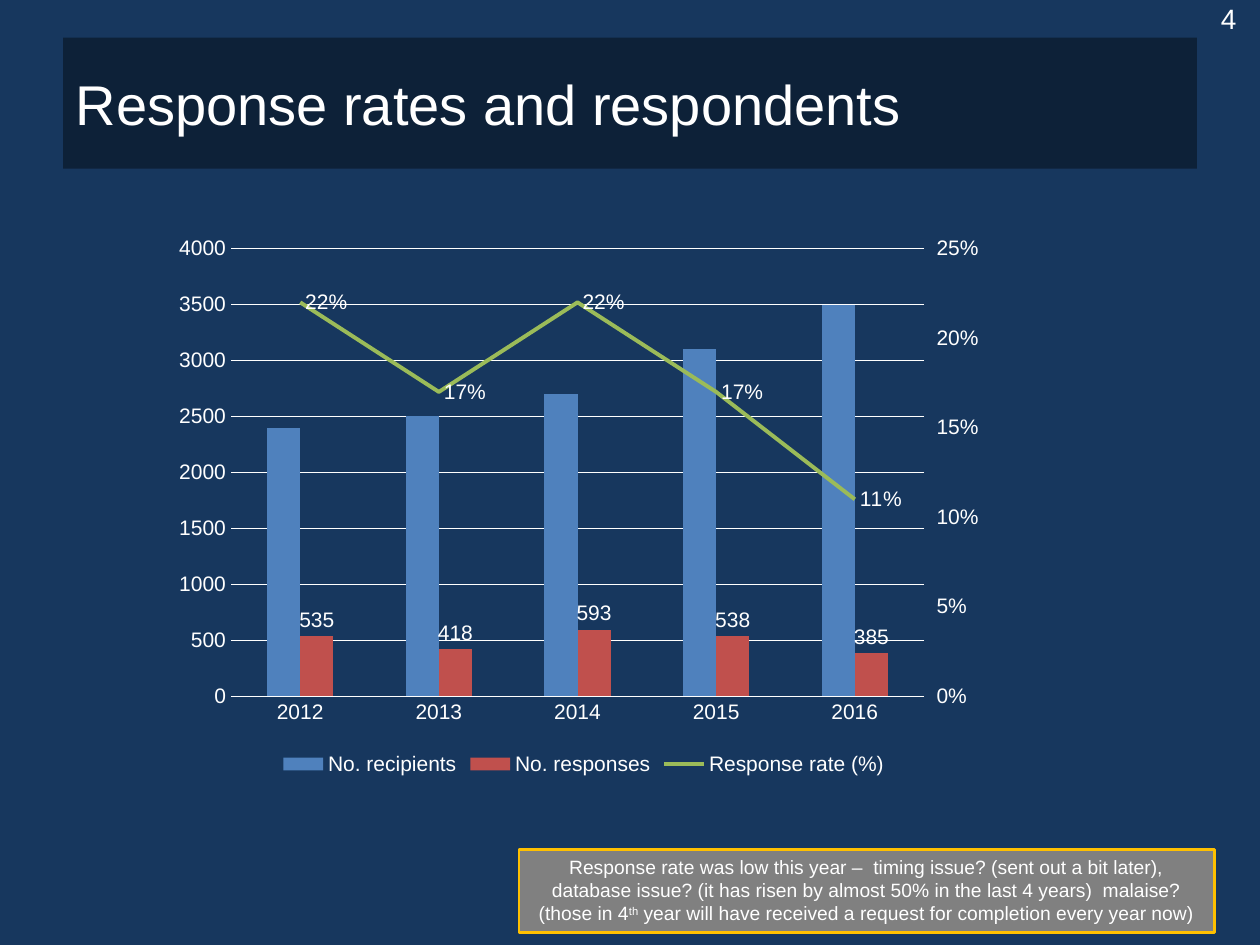
from copy import deepcopy
from pptx import Presentation
from pptx.chart.data import CategoryChartData as ChartData
from pptx.dml.color import RGBColor as RGB
from pptx.enum.chart import XL_CHART_TYPE as Kind, XL_LABEL_POSITION as Spot
from pptx.enum.chart import XL_LEGEND_POSITION as Side, XL_MARKER_STYLE as Mark, XL_TICK_MARK as Tick
from pptx.enum.shapes import MSO_SHAPE as Shape
from pptx.enum.text import MSO_ANCHOR as Anchor, MSO_AUTO_SIZE as Auto, PP_ALIGN as Align
from pptx.oxml import parse_xml
from pptx.oxml.ns import nsdecls
from pptx.util import Cm, Pt

FONT = "Arial"
HEX = {"back": "17375E", "band": "000000", "text": "FFFFFF", "note": "808080",
       "edge": "FFC000", "sent": "4F81BD", "got": "C0504D", "rate": "9BBB59"}
TITLE = "Response rates and respondents"
PAGE = "4"
NOTE = [
    ("Response rate was low this year –  timing issue? (sent out a bit later), database issue? "
     "(it has risen by almost 50% in the last 4 years)  malaise? (those in 4", False),
    ("th", True),
    (" year will have received a request for completion every year now)", False),
]
YEARS = ["2012", "2013", "2014", "2015", "2016"]
SERIES = [
    ("No. recipients", [2400, 2500, 2700, 3100, 3500], "General"),
    ("No. responses", [535, 418, 593, 538, 385], "General"),
    ("Response rate (%)", [0.22, 0.17, 0.22, 0.17, 0.11], "0%"),
]
PLOT = {"x": 0.08, "y": 0.05, "w": 0.825, "h": 0.8}
AXES = {"left": ("50010", "50020"), "right": ("50030", "50040")}


def color(name):
    return RGB.from_string(HEX[name])


def style(font, size):
    font.name, font.size = FONT, Pt(size)
    font.color.rgb = color("text")


def paint(fill, name):
    fill.solid()
    fill.fore_color.rgb = color(name)


def stroke(line, name, width):
    line.color.rgb = color(name)
    line.width = Pt(width)


def write(para, text, size, raised=False):
    run = para.add_run()
    run.text = text
    style(run.font, size)
    if raised:
        run._r.get_or_add_rPr().set("baseline", "30000")


def label(ser, spot, fmt):
    tags = ser.data_labels
    tags.show_value = True
    tags.position = spot
    tags.number_format, tags.number_format_is_linked = fmt, False
    style(tags.font, 12)


def setval(root, query, value):
    for node in root.xpath(query):
        node.set("val", value)


def scale(axis, top, step):
    axis.minimum_scale, axis.maximum_scale, axis.major_unit = 0, top, step


def place(area):
    for old in area.xpath("./c:layout"):
        area.remove(old)
    modes = "".join(f'<c:{k}Mode val="edge"/>' for k in "xy")
    sizes = "".join(f'<c:{k} val="{v}"/>' for k, v in PLOT.items())
    area.insert(0, parse_xml(
        f'<c:layout {nsdecls("c")}><c:manualLayout><c:layoutTarget val="inner"/>'
        f'{modes}{sizes}</c:manualLayout></c:layout>'))


def combine(area):
    bars = area.xpath("./c:barChart")[0]
    rate = bars.xpath("./c:ser")[-1]
    for node in rate.xpath("./c:invertIfNegative"):
        rate.remove(node)
    ids = "".join(f'<c:axId val="{i}"/>' for i in AXES["right"])
    lines = parse_xml(
        f'<c:lineChart {nsdecls("c")}><c:grouping val="standard"/><c:varyColors val="0"/>'
        f'<c:marker val="1"/>{ids}</c:lineChart>')
    lines.insert(2, rate)
    bars.addnext(lines)

    cat, val = area.xpath("./c:catAx")[0], area.xpath("./c:valAx")[0]
    for node, one in zip(bars.xpath("./c:axId"), AXES["left"]):
        node.set("val", one)
    extra = deepcopy(val), deepcopy(cat)
    for pair, side in (((cat, val), "left"), (extra[::-1], "right")):
        for axis, own, other in zip(pair, AXES[side], AXES[side][::-1]):
            setval(axis, "./c:axId", own)
            setval(axis, "./c:crossAx", other)
    right, hidden = extra
    right.remove(right.xpath("./c:majorGridlines")[0])
    setval(right, "./c:axPos", "r")
    setval(right, "./c:crosses", "max")
    setval(right, "./c:majorTickMark", "out")
    setval(right, "./c:scaling/c:max", "0.25")
    setval(right, "./c:majorUnit", "0.05")
    right.xpath("./c:numFmt")[0].set("formatCode", "0%")
    setval(hidden, "./c:delete", "1")
    val.addnext(right)
    right.addnext(hidden)


def draw(slide):
    data = ChartData()
    data.categories = YEARS
    for name, vals, fmt in SERIES:
        data.add_series(name, vals, fmt)
    chart = slide.shapes.add_chart(Kind.COLUMN_CLUSTERED, Cm(3.3), Cm(4.45),
                                   Cm(16.94), Cm(11.28), data).chart
    style(chart.font, 10)
    chart.has_title = False
    chart.has_legend = True
    chart.legend.position = Side.BOTTOM
    chart.legend.include_in_layout = False
    style(chart.legend.font, 12)

    cat, val = chart.category_axis, chart.value_axis
    for axis in (cat, val):
        axis.major_tick_mark = axis.minor_tick_mark = Tick.NONE
        style(axis.tick_labels.font, 12)
    stroke(cat.format.line, "text", 0.75)
    val.format.line.fill.background()
    val.has_major_gridlines = True
    stroke(val.major_gridlines.format.line, "text", 0.75)
    val.tick_labels.number_format = "General"
    val.tick_labels.number_format_is_linked = False
    scale(val, 4000, 500)

    area = chart.element.xpath(".//c:plotArea")[0]
    combine(area)
    place(area)
    bars, lines = chart.plots
    bars.gap_width, bars.overlap = 219, 0
    bars.vary_by_categories = False
    sent, got = bars.series
    paint(sent.format.fill, "sent")
    paint(got.format.fill, "got")
    label(got, Spot.OUTSIDE_END, "General")
    rate = lines.series[0]
    stroke(rate.format.line, "rate", 2.25)
    rate.marker.style = Mark.NONE
    rate.smooth = False
    label(rate, Spot.RIGHT, "0%")


def main():
    deck = Presentation()
    deck.slide_width, deck.slide_height = Cm(25.4), Cm(19.05)
    slide = deck.slides.add_slide(deck.slide_layouts[5])
    paint(slide.background.fill, "back")

    page = slide.shapes.add_textbox(Cm(24.36), Cm(-0.1), Cm(1.22), Cm(0.94)).text_frame
    page.word_wrap = False
    page.auto_size = Auto.SHAPE_TO_FIT_TEXT
    write(page.paragraphs[0], PAGE, 16)

    title = slide.shapes.title
    title.left, title.top, title.width, title.height = Cm(1.27), Cm(0.76), Cm(22.86), Cm(2.64)
    paint(title.fill, "band")
    tint = title.element.xpath("./p:spPr/a:solidFill/a:srgbClr")[0]
    tint.append(parse_xml(f'<a:alpha {nsdecls("a")} val="40000"/>'))
    title.text_frame.vertical_anchor = Anchor.MIDDLE
    head = title.text_frame.paragraphs[0]
    head.alignment = Align.LEFT
    write(head, TITLE, 32)

    draw(slide)

    note = slide.shapes.add_shape(Shape.RECTANGLE, Cm(10.46), Cm(17.12), Cm(14.02), Cm(1.68))
    note.shadow.inherit = False
    paint(note.fill, "note")
    stroke(note.line, "edge", 1.5)
    frame = note.text_frame
    frame.word_wrap = True
    frame.auto_size = Auto.SHAPE_TO_FIT_TEXT
    frame.vertical_anchor = Anchor.TOP
    para = frame.paragraphs[0]
    para.alignment = Align.CENTER
    for text, raised in NOTE:
        write(para, text, 11, raised)

    deck.save("out.pptx")


if __name__ == "__main__":
    main()
